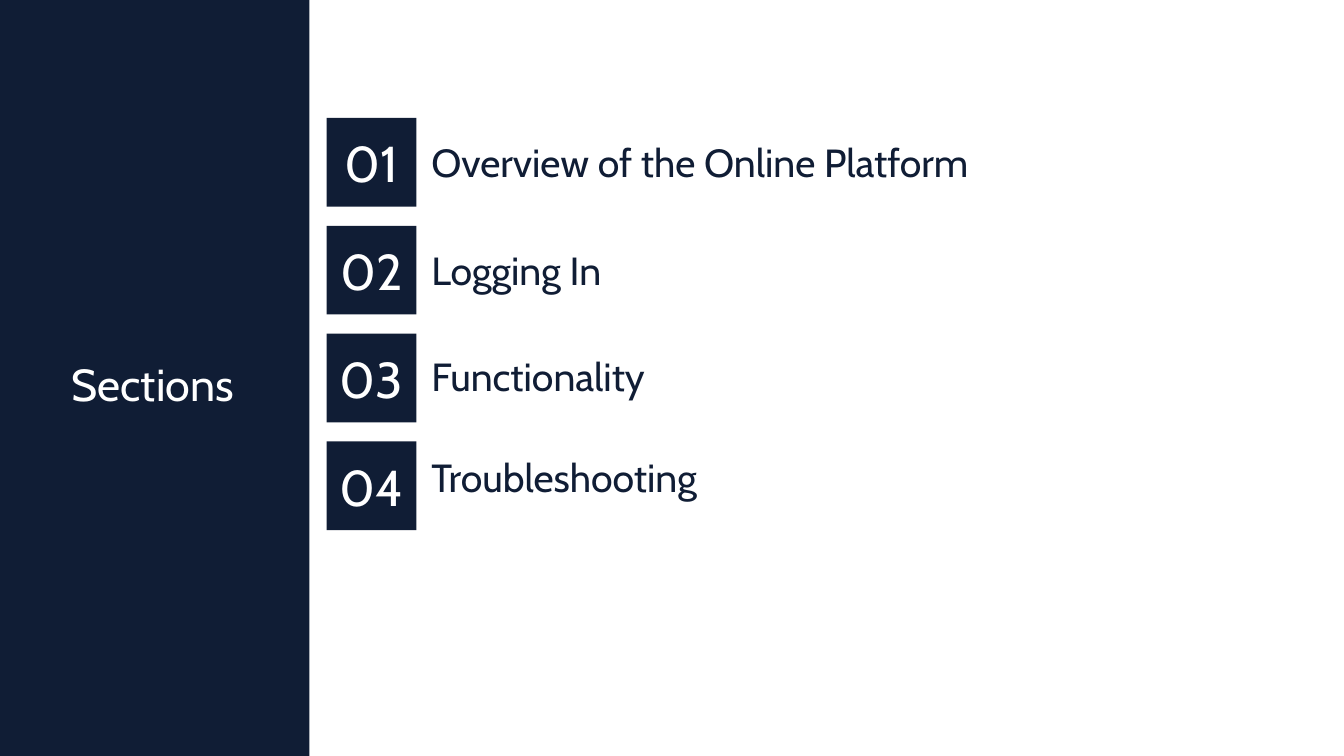
from pptx import Presentation
from pptx.dml.color import RGBColor
from pptx.enum import shapes, text
from pptx.util import Inches, Pt

COLORS = {"navy": "101D35", "white": "FFFFFF"}

deck = Presentation()
deck.slide_width = Inches(13.33)
deck.slide_height = Inches(7.5)
slide = deck.slides.add_slide(deck.slide_layouts[6])


def write(holder, words, size, color, align=text.PP_ALIGN.LEFT):
    frame = holder.text_frame
    frame.word_wrap = True
    frame.vertical_anchor = text.MSO_ANCHOR.MIDDLE
    line = frame.paragraphs[0]
    line.alignment = align
    run = line.add_run()
    run.text = words
    run.font.name = "Cabin"
    run.font.size = Pt(size)
    run.font.color.rgb = RGBColor.from_string(COLORS[color])


def navy_block(left, top, width, height):
    block = slide.shapes.add_shape(
        shapes.MSO_SHAPE.RECTANGLE,
        Inches(left), Inches(top), Inches(width), Inches(height))
    block.shadow.inherit = False
    block.fill.solid()
    block.fill.fore_color.rgb = RGBColor.from_string(COLORS["navy"])
    block.line.fill.background()
    return block


navy_block(0, 0, 3.07, 7.5)
heading = slide.shapes.add_textbox(Inches(0), Inches(3.49), Inches(3.03), Inches(0.64))
write(heading, "Sections", size=32, color="white", align=text.PP_ALIGN.CENTER)

sections = [
    ("Overview of the Online Platform", 1.17),
    ("Logging In", 2.24),
    ("Functionality", 3.29),
    ("Troubleshooting", 4.29),
]
first_top, pitch, row_height = 1.17, 1.07, 0.88

for index, (section, label_top) in enumerate(sections):
    number = navy_block(3.24, first_top + index * pitch, 0.89, row_height)
    write(number, f"{index + 1:02d}", size=36, color="white", align=text.PP_ALIGN.CENTER)
    label = slide.shapes.add_textbox(
        Inches(4.18), Inches(label_top), Inches(8.73), Inches(row_height))
    write(label, section, size=28, color="navy")

deck.save("out.pptx")
